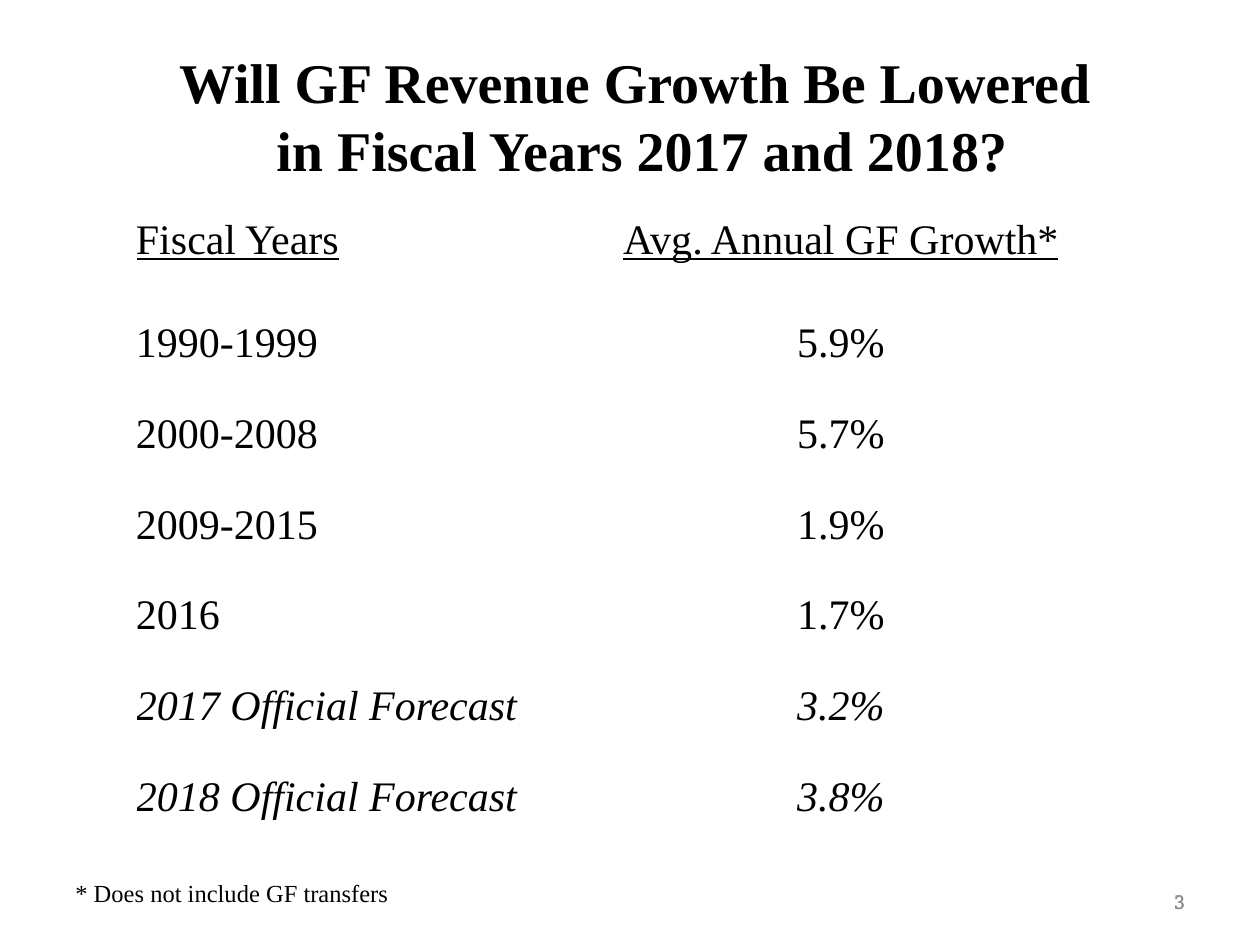
from typing import NamedTuple

from pptx import Presentation
from pptx.dml.color import RGBColor
from pptx.enum.text import MSO_ANCHOR as Anchor, PP_ALIGN as Align
from pptx.util import Cm, Pt

COLORS = {"text": "000000", "number": "8C8C8C"}
SERIF = "Times New Roman"


class TextStyle(NamedTuple):
    size: int
    font: str = SERIF
    color: str = "text"
    bold: bool = False
    italic: bool = False
    underline: bool = False


class Box(NamedTuple):
    left: float
    top: float
    width: float
    height: float

    def lengths(self) -> list[Cm]:
        return [Cm(value) for value in self]


class GrowthRow(NamedTuple):
    years: str
    growth: str
    height: float = 1.83
    italic: bool = False
    underline: bool = False


GROWTH_ROWS = [
    GrowthRow("Fiscal Years", "Avg. Annual GF Growth*", height=1.07, underline=True),
    GrowthRow("1990-1999", "5.9%", height=2.08),
    GrowthRow("2000-2008", "5.7%"),
    GrowthRow("2009-2015", "1.9%"),
    GrowthRow("2016", "1.7%"),
    GrowthRow("2017 Official Forecast", "3.2%", italic=True),
    GrowthRow("2018 Official Forecast", "3.8%", italic=True),
]
COLUMN_WIDTHS = (8.94, 10.54)
COLUMN_ALIGNMENTS = (Align.LEFT, Align.CENTER)


def write_line(paragraph, text: str, style: TextStyle, alignment: Align) -> None:
    paragraph.alignment = alignment
    run = paragraph.add_run()
    run.text = text
    font = run.font
    font.name, font.size = style.font, Pt(style.size)
    font.bold, font.italic, font.underline = style.bold, style.italic, style.underline
    font.color.rgb = RGBColor.from_string(COLORS[style.color])


def add_text(slide, box: Box, lines: list[str], style: TextStyle,
             alignment: Align = Align.LEFT, anchor: Anchor = Anchor.TOP,
             wrap: bool = True) -> None:
    frame = slide.shapes.add_textbox(*box.lengths()).text_frame
    frame.word_wrap = wrap
    frame.vertical_anchor = anchor
    for index, line in enumerate(lines):
        paragraph = frame.add_paragraph() if index else frame.paragraphs[0]
        write_line(paragraph, line, style, alignment)


def add_growth_table(slide, left: float, top: float) -> None:
    box = Box(left, top, sum(COLUMN_WIDTHS), sum(row.height for row in GROWTH_ROWS))
    table = slide.shapes.add_table(
        len(GROWTH_ROWS), len(COLUMN_WIDTHS), *box.lengths()).table
    table.first_row = table.horz_banding = False
    for column, width in zip(table.columns, COLUMN_WIDTHS):
        column.width = Cm(width)
    for table_row, row in zip(table.rows, GROWTH_ROWS):
        table_row.height = Cm(row.height)
        style = TextStyle(24, italic=row.italic, underline=row.underline)
        texts = (row.years, row.growth)
        for cell, text, alignment in zip(table_row.cells, texts, COLUMN_ALIGNMENTS):
            cell.fill.background()
            cell.vertical_anchor = Anchor.BOTTOM
            cell.margin_left = cell.margin_right = Cm(0)
            cell.margin_top = cell.margin_bottom = Cm(0)
            write_line(cell.text_frame.paragraphs[0], text, style, alignment)


def main() -> None:
    presentation = Presentation()
    presentation.slide_width, presentation.slide_height = Cm(25.4), Cm(19.05)
    slide = presentation.slides.add_slide(presentation.slide_layouts[6])

    add_text(slide, Box(0.64, 0.84, 24.33, 2.74),
             ["Will GF Revenue Growth Be Lowered", " in Fiscal Years 2017 and 2018?"],
             TextStyle(32, bold=True), Align.CENTER)
    for font in ("Calibri", SERIF):
        add_text(slide, Box(18.21, 17.65, 5.92, 1.02), ["3"],
                 TextStyle(12, font, "number"), Align.RIGHT, Anchor.MIDDLE)
    add_growth_table(slide, 2.74, 4.24)
    add_text(slide, Box(1.27, 17.58, 6.83, 0.86), ["* Does not include GF transfers"],
             TextStyle(14), wrap=False)

    presentation.save("out.pptx")


if __name__ == "__main__":
    main()
